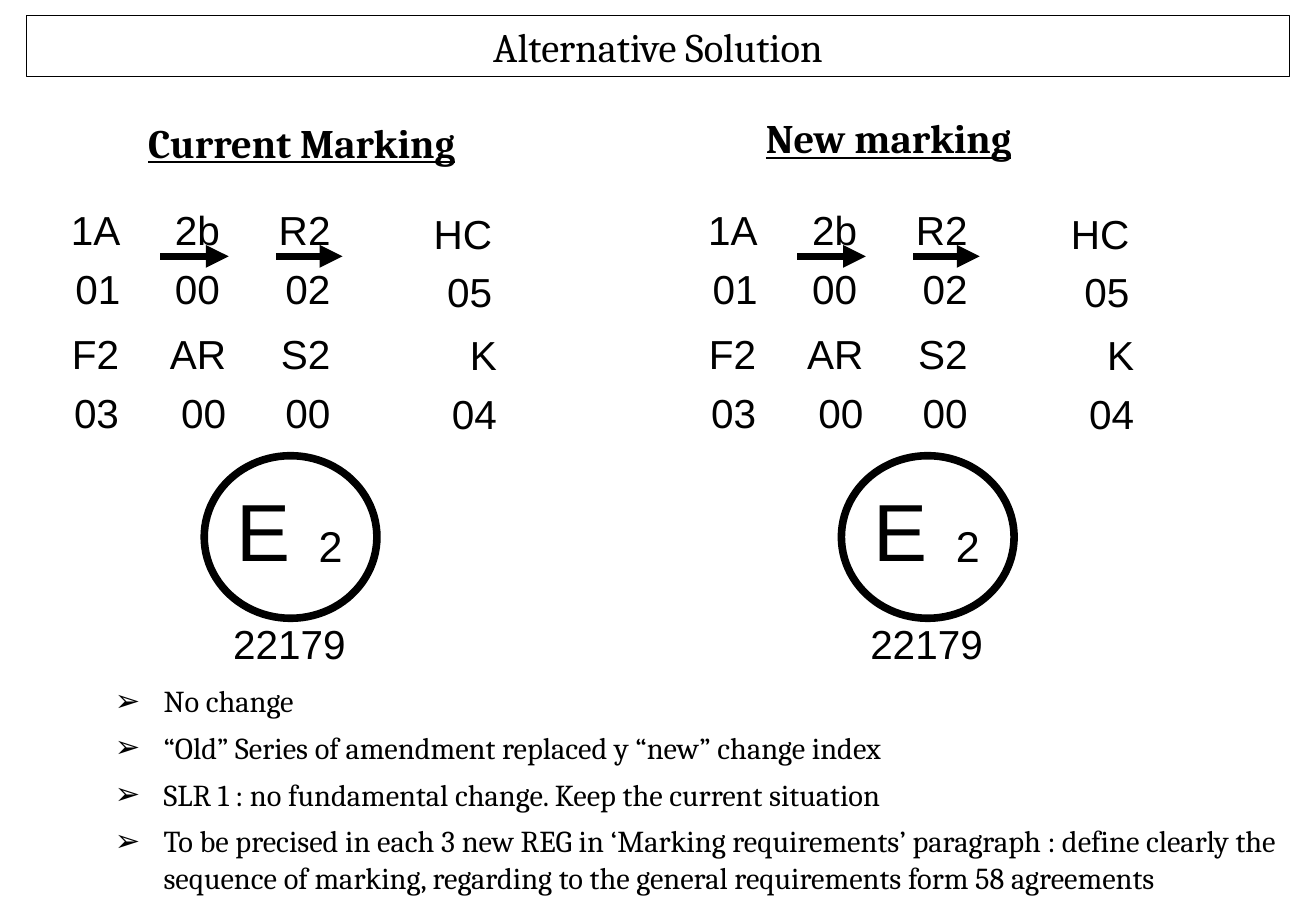
"""Build the slide that sets the current marking beside the new marking."""
from lxml.etree import SubElement
from pptx import Presentation
from pptx.dml.color import RGBColor
from pptx.enum.shapes import MSO_CONNECTOR, MSO_SHAPE
from pptx.enum.text import MSO_ANCHOR, MSO_AUTO_SIZE, PP_ALIGN
from pptx.oxml.ns import qn
from pptx.util import Cm, Pt

BLACK = "000000"
MARKING_PITCH = 13.32
CODES = [
    ("1A\n01", 1.17, 4.17, 1.6),
    ("2b\n00", 3.35, 4.17, 1.5),
    ("R2\n02", 5.56, 4.17, 1.6),
    ("F2\n03", 1.24, 6.76, 1.5),
    ("AR\n00", 3.23, 6.76, 1.75),
    ("S2\n00", 5.61, 6.76, 1.55),
    ("HC\n05", 8.79, 4.24, 1.75),
    ("K\n04", 9.17, 6.78, 1.47),
]
REMARKS = [
    "No change",
    "“Old” Series of amendment replaced y “new” change index",
    "SLR 1 : no fundamental change. Keep the current situation",
    "To be precised in each 3 new REG in ‘Marking requirements’ paragraph : "
    "define clearly the sequence of marking, regarding to the general "
    "requirements form 58 agreements",
]


def color(value):
    return RGBColor.from_string(value)


def write(box, text, size, font, align, after=0):
    frame = box.text_frame
    frame.text = text
    frame.word_wrap = True
    frame.auto_size = MSO_AUTO_SIZE.NONE
    for paragraph in frame.paragraphs:
        paragraph.alignment = align
        paragraph.space_after = Pt(after)
        for run in paragraph.runs:
            run.font.size = Pt(size)
            run.font.name = font
            run.font.color.rgb = color(BLACK)
    return frame


presentation = Presentation()
presentation.slide_width = Cm(27.51)
presentation.slide_height = Cm(19.05)
slide = presentation.slides.add_slide(presentation.slide_layouts[5])

title = slide.shapes.title
title.left, title.top, title.width, title.height = Cm(0.56), Cm(0.33), Cm(26.39), Cm(1.27)
title.line.color.rgb = color(BLACK)
title.line.width = Pt(0.75)
write(title, "Alternative Solution", 24, "Cambria", PP_ALIGN.CENTER)
title.text_frame.vertical_anchor = MSO_ANCHOR.MIDDLE

remarks = slide.shapes.add_textbox(Cm(1.17), Cm(14.15), Cm(26.59), Cm(5.99))
write(remarks, "\n".join(REMARKS), 18, "Cambria", PP_ALIGN.LEFT, 6)
for remark in remarks.text_frame.paragraphs:
    properties = remark._p.get_or_add_pPr()
    properties.set("marL", str(Cm(2)))
    properties.set("indent", str(Cm(-1.02)))
    SubElement(properties, qn("a:buFont"), typeface="Arial")
    SubElement(properties, qn("a:buChar"), char="➢")

for heading, left, top in [("Current Marking", 1.85, 2.34), ("New marking", 14.76, 2.24)]:
    heading_box = slide.shapes.add_textbox(Cm(left), Cm(top), Cm(8.31), Cm(1.27))
    heading_line = write(heading_box, heading, 24, "Cambria", PP_ALIGN.LEFT, 6).paragraphs[0]
    heading_line._p.get_or_add_pPr().set("marL", str(Cm(1)))
    heading_line.runs[0].font.bold = True
    heading_line.runs[0].font.underline = True

for shift in (0, MARKING_PITCH):
    marking = slide.shapes.add_group_shape().shapes

    approval_number = marking.add_textbox(Cm(4.55 + shift), Cm(12.83), Cm(3), Cm(2.31))
    write(approval_number, "22179", 24, "Arial", PP_ALIGN.CENTER)

    circle = marking.add_shape(
        MSO_SHAPE.OVAL, Cm(4.27 + shift), Cm(9.53), Cm(3.61), Cm(3.4))
    circle.shadow.inherit = False
    circle.fill.background()
    circle.line.color.rgb = color(BLACK)
    circle.line.width = Pt(4.5)

    country_mark = marking.add_textbox(Cm(3.96 + shift), Cm(9.5), Cm(4.19), Cm(2.82))
    mark_line = write(country_mark, "E", 48, "Arial", PP_ALIGN.CENTER).paragraphs[0]
    for text, size in [(" ", 60), ("2", 44)]:
        run = mark_line.add_run()
        run.text = text
        run.font.size = Pt(size)
        run.font.name = "Arial"
        run.font.color.rgb = color(BLACK)
    mark_line.runs[-1].font._element.set("baseline", "-2000")

    for code, left, top, width in CODES:
        code_box = marking.add_textbox(Cm(left + shift), Cm(top), Cm(width), Cm(2.51))
        write(code_box, code, 24, "Arial", PP_ALIGN.RIGHT, 6).word_wrap = False

    for start, end in [(3.35, 4.78), (5.77, 7.16)]:
        arrow = marking.add_connector(
            MSO_CONNECTOR.STRAIGHT, Cm(start + shift), Cm(5.36), Cm(end + shift), Cm(5.36))
        arrow.line.color.rgb = color(BLACK)
        arrow.line.width = Pt(4.5)
        SubElement(arrow.line._get_or_add_ln(), qn("a:tailEnd"), type="triangle")
        SubElement(arrow._element.spPr, qn("a:effectLst"))

presentation.save("out.pptx")
